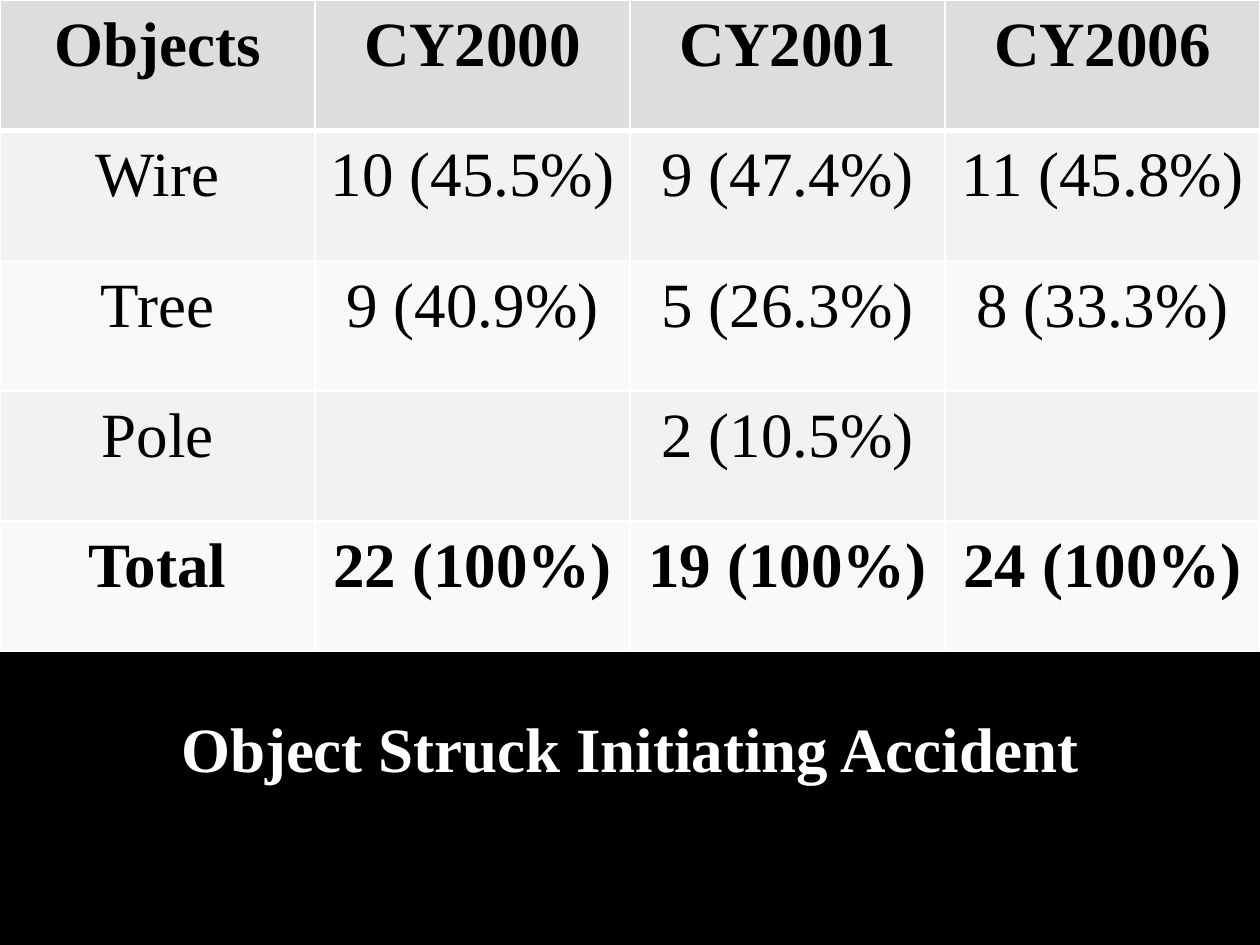
from lxml import etree
from pptx import Presentation
from pptx.dml.color import RGBColor
from pptx.enum.text import MSO_AUTO_SIZE, PP_ALIGN
from pptx.oxml.ns import qn
from pptx.util import Inches, Pt

CENTER = PP_ALIGN.CENTER
GROW = MSO_AUTO_SIZE.SHAPE_TO_FIT_TEXT


def paint(fill, color):
    fill.solid()
    fill.fore_color.rgb = RGBColor.from_string(color)


def write(para, text, color, bold):
    para.alignment = CENTER
    run = para.add_run()
    run.text = text
    run.font.name = "Times New Roman"
    run.font.size = Pt(36)
    run.font.bold = bold
    paint(run.font.fill, color)


prs = Presentation()
prs.slide_width = Inches(10)
prs.slide_height = Inches(7.5)
slide = prs.slides.add_slide(prs.slide_layouts[6])
paint(slide.background.fill, "000000")

# Caption
box = slide.shapes.add_textbox(Inches(0), Inches(5.58), Inches(10), Inches(0.71))
frame = box.text_frame
frame.word_wrap = True
frame.auto_size = GROW
write(frame.paragraphs[0], "Object Struck Initiating Accident", "FFFFFF", True)

# Table of objects struck by year
rows = [
    ["Objects", "CY2000", "CY2001", "CY2006"],
    ["Wire", "10 (45.5%)", "9 (47.4%)", "11 (45.8%)"],
    ["Tree", "9 (40.9%)", "5 (26.3%)", "8 (33.3%)"],
    ["Pole", "", "2 (10.5%)", ""],
    ["Total", "22 (100%)", "19 (100%)", "24 (100%)"],
]
last = len(rows) - 1
table = slide.shapes.add_table(
    len(rows), len(rows[0]), Inches(0), Inches(0), Inches(10), Inches(5.17)
).table
table.first_row = False
table.horz_banding = False

for i, row in enumerate(rows):
    shade = "DDDDDD" if i == 0 else ("F9F9F9", "F2F2F2")[i % 2]
    for j, text in enumerate(row):
        cell = table.cell(i, j)
        cell.margin_left = cell.margin_right = Inches(0.07)
        cell.margin_top = cell.margin_bottom = Inches(0)

        # White borders, with a heavy rule under the header
        props = cell._tc.get_or_add_tcPr()
        widths = {"L": 1, "R": 1, "T": 3 if i == 1 else 1, "B": 3 if i == 0 else 1}
        for side, width in widths.items():
            line = etree.SubElement(props, qn("a:ln" + side), w=str(Pt(width)))
            solid = etree.SubElement(line, qn("a:solidFill"))
            etree.SubElement(solid, qn("a:srgbClr"), val="FFFFFF")
        paint(cell.fill, shade)

        if text:
            para = cell.text_frame.paragraphs[0]
            para.line_spacing = 1.15
            write(para, text, "000000", i in (0, last))

prs.save("out.pptx")
